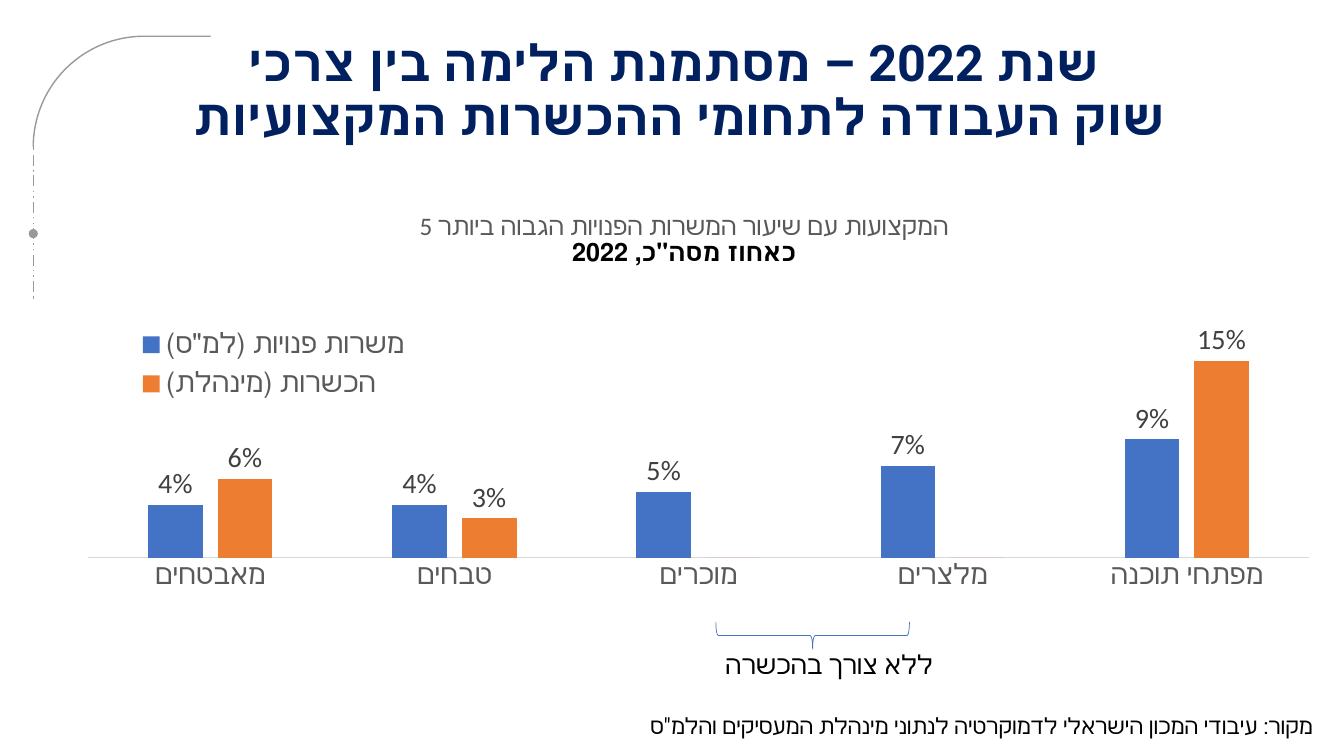
from math import cos, pi, sin

from pptx import Presentation
from pptx import util as u
from pptx.chart.data import CategoryChartData
from pptx.dml.color import RGBColor
from pptx.enum import chart as ch, dml, shapes, text
from pptx.oxml import parse_xml
from pptx.oxml.ns import nsdecls, qn

W, H = 13.33, 7.5
GREY, BLUE, ORANGE, NAVY = "999999", "4472C4", "ED7D31", "002060"
DIM, BLACK = "595959", "000000"
JOBS = ["מאבטחים", "טבחים", "מוכרים", "מלצרים", "מפתחי תוכנה"]
SERIES = [
    ("משרות פנויות (למ\"ס)", (0.04, 0.04, 0.05, 0.07, 0.09), BLUE),
    ("הכשרות (מינהלת)", (0.06, 0.03, 0, 0, 0.15), ORANGE),
]


def rgb(code):
    return RGBColor.from_string(code)


def inches(*box):
    return [u.Inches(v) for v in box]


def style(font, size, color, name="Calibri", bold=False):
    font.size, font.name, font.bold = u.Pt(size), name, bold
    font.color.rgb = rgb(color)


def stroke(line, color, width):
    line.color.rgb = rgb(color)
    line.width = u.Pt(width)


def write(slide, box, lines, size, color=BLACK, bold=False, align="RIGHT", pad=(0.1, 0.05)):
    """Right-to-left text, one run per line."""
    frame = slide.shapes.add_textbox(*inches(*box)).text_frame
    frame.word_wrap = True
    frame.margin_left = frame.margin_right = u.Inches(pad[0])
    frame.margin_top = frame.margin_bottom = u.Inches(pad[1])
    para = frame.paragraphs[0]
    para.alignment = getattr(text.PP_ALIGN, align)
    para._p.get_or_add_pPr().set("rtl", "1")
    for i, line in enumerate(lines):
        if i:
            para.add_line_break()
        run = para.add_run()
        run.text = line
        style(run.font, size, color, "Roboto", bold)
        face = run._r.get_or_add_rPr().makeelement(qn("a:cs"), {"typeface": "Roboto"})
        run._r.rPr.append(face)
    return frame, para


def corner(slide, box):
    """Rounded corner line, dashed tail and dot."""
    left, top, width, height = box
    r = width * 0.625
    arc = [(left + r - r * sin(a), top + r - r * cos(a))
           for a in (pi / 2 * i / 40 for i in range(41))]
    pen = slide.shapes.build_freeform(*inches(left + width, top), scale=1.0)
    pen.add_line_segments([inches(*p) for p in arc], close=False)
    curve = pen.convert_to_shape()
    curve.fill.background()
    curve.shadow.inherit = False
    stroke(curve.line, GREY, 1)

    for start, end, dashed in ((1.1, 1.13, 0), (1.18, 1.35, 1), (1.38, 2.56, 1), (2.58, 2.61, 0)):
        tail = slide.shapes.add_connector(
            shapes.MSO_CONNECTOR.STRAIGHT, *inches(left, top + start, left, top + end))
        stroke(tail.line, GREY, 1)
        if dashed:
            tail.line.dash_style = dml.MSO_LINE.DASH_DOT_DOT
        tail._element.spPr.append(parse_xml(f"<a:effectLst {nsdecls('a')}/>"))

    d = 0.09
    dot = slide.shapes.add_shape(
        shapes.MSO_SHAPE.OVAL, *inches(left - d / 2, top + height * 0.75 - d / 2, d, d))
    dot.shadow.inherit = False
    dot.fill.solid()
    dot.fill.fore_color.rgb = rgb(GREY)
    dot.line.fill.background()


def layout(part, index, inner=False, **shares):
    """Fix a chart part at shares of the chart's size."""
    for old in part.findall(qn("c:layout")):
        part.remove(old)
    target = '<c:layoutTarget val="inner"/>' if inner else ""
    modes = "".join(f'<c:{k}Mode val="edge"/>' for k in "xy")
    sizes = "".join(f'<c:{k} val="{v}"/>' for k, v in shares.items())
    part.insert(index, parse_xml(
        f"<c:layout {nsdecls('c')}><c:manualLayout>{target}{modes}{sizes}"
        "</c:manualLayout></c:layout>"))


def columns(slide, box):
    data = CategoryChartData(number_format="0%")
    data.categories = JOBS
    for name, vals, _ in SERIES:
        data.add_series(name, vals)
    chart = slide.shapes.add_chart(
        ch.XL_CHART_TYPE.COLUMN_CLUSTERED, *inches(*box), data).chart
    style(chart.font, 20, BLACK)

    # Title
    frame = chart.chart_title.text_frame
    lines = (("5 המקצועות עם שיעור המשרות הפנויות הגבוה ביותר", DIM, "Calibri", False),
             ("כאחוז מסה\"כ, 2022", BLACK, "Roboto", True))
    for i, (words, color, face, bold) in enumerate(lines):
        para = frame.add_paragraph() if i else frame.paragraphs[0]
        run = para.add_run()
        run.text = words
        style(run.font, 18, color, face, bold)
    chart.chart_title.include_in_layout = False

    # Axes
    jobs, share = chart.category_axis, chart.value_axis
    jobs.major_tick_mark = ch.XL_TICK_MARK.NONE
    style(jobs.tick_labels.font, 20, DIM)
    stroke(jobs.format.line, "D9D9D9", 0.75)
    share.has_major_gridlines = share.visible = False
    share.minimum_scale, share.maximum_scale = 0, 0.16
    share.tick_labels.number_format = "0%"
    share.tick_labels.number_format_is_linked = False

    # Bars and labels
    plot = chart.plots[0]
    plot.gap_width, plot.overlap, plot.vary_by_categories = 219, -27, False
    for bars, (_, vals, color) in zip(plot.series, SERIES):
        bars.format.fill.solid()
        bars.format.fill.fore_color.rgb = rgb(color)
        tags = bars.data_labels
        tags.show_value = True
        tags.position = ch.XL_LABEL_POSITION.OUTSIDE_END
        tags.number_format, tags.number_format_is_linked = "0%", False
        style(tags.font, 20, "404040")
        blanks = [i for i, v in enumerate(vals) if not v]
        for at, i in enumerate(blanks):
            tags._element.insert(at, parse_xml(
                f'<c:dLbl {nsdecls("c")}><c:idx val="{i}"/><c:delete val="1"/></c:dLbl>'))

    # Legend and placing
    chart.has_legend = True
    chart.legend.position = ch.XL_LEGEND_POSITION.BOTTOM
    chart.legend.include_in_layout = False
    style(chart.legend.font, 20, DIM)
    root = chart._chartSpace.chart
    layout(root.find(qn("c:title")), 1, x=0.29, y=0.07)
    layout(root.plotArea, 0, inner=True, x=0.03, y=0.356, w=0.967, h=0.425)
    layout(root.find(qn("c:legend")), 1, x=0.067, y=0.3, w=0.22, h=0.18)


def brace(slide, box):
    """Brace pointing down over its note, turned a quarter."""
    left, top, width, height = box
    mid, half = left + width / 2, top + height / 2
    mark = slide.shapes.add_shape(
        shapes.MSO_SHAPE.LEFT_BRACE,
        *inches(mid - height / 2, half - width / 2, height, width))
    mark.rotation = 270
    mark.shadow.inherit = False
    mark.fill.background()
    stroke(mark.line, BLUE, 0.5)


def main():
    deck = Presentation()
    deck.slide_width, deck.slide_height = inches(W, H)
    slide = deck.slides.add_slide(deck.slide_layouts[6])
    corner(slide, (0.33, 0.36, 1.76, 2.61))
    columns(slide, (0.5, 1.7, 12.52, 4.91))
    write(slide, (4.37, 7.02, 8.76, 0.37),
          ["מקור: עיבודי המכון הישראלי לדמוקרטיה לנתוני מינהלת המעסיקים והלמ\"ס"], 16)
    write(slide, (0.42, 6.38, 8.93, 0.42), ["ללא צורך בהכשרה"], 18.7)
    frame, para = write(
        slide, (0.23, 0.19, 12.9, 1.45),
        ["שנת 2022 – מסתמנת הלימה בין צרכי", "שוק העבודה לתחומי ההכשרות המקצועיות "],
        36, NAVY, True, "CENTER", (0.13, 0.07))
    frame.vertical_anchor = text.MSO_ANCHOR.MIDDLE
    para.line_spacing = 0.9
    brace(slide, (7.1, 6.17, 1.92, 0.27))
    deck.save("out.pptx")


if __name__ == "__main__":
    main()
